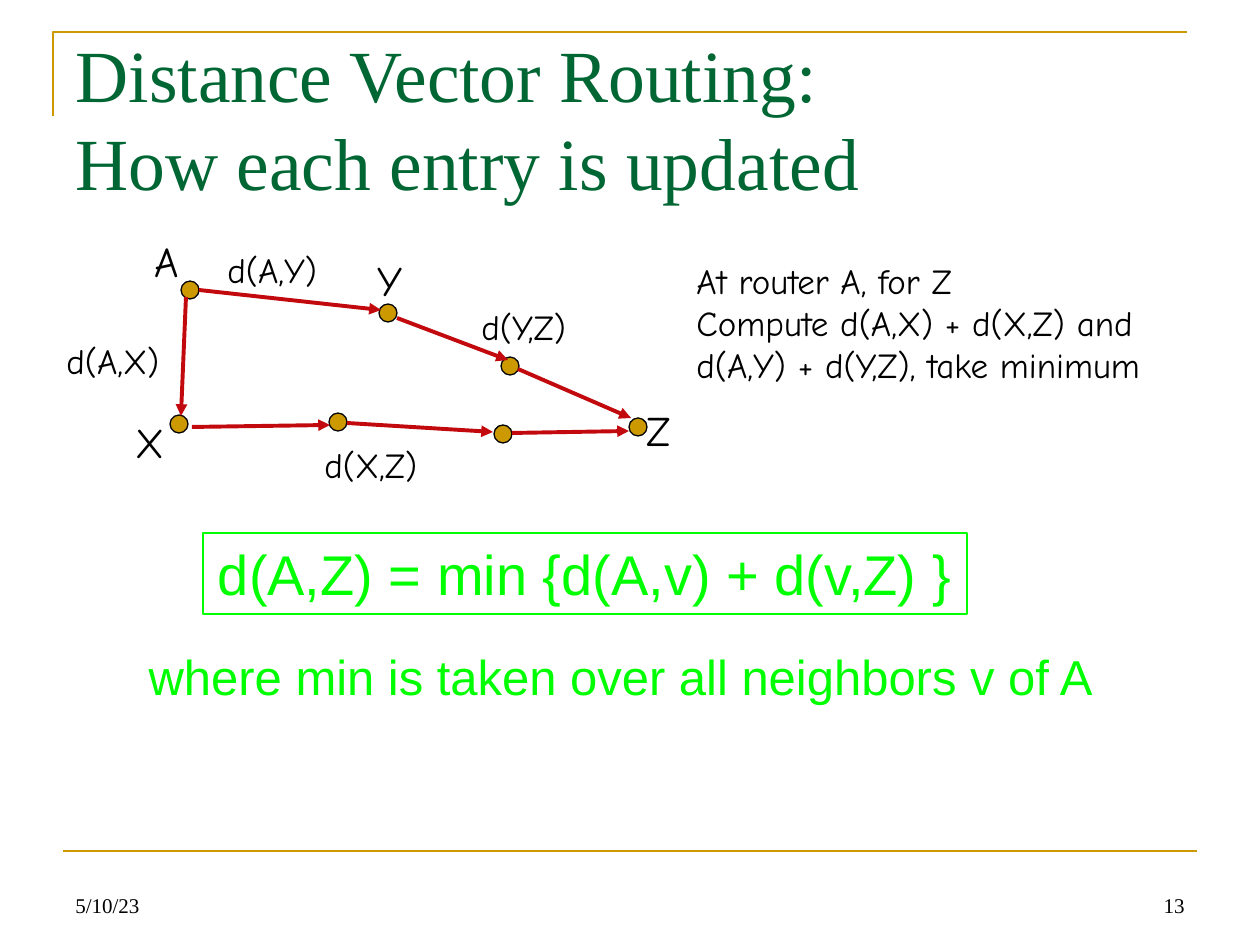
from lxml import etree
from pptx import Presentation
from pptx import util as u
from pptx.dml.color import RGBColor
from pptx.enum import shapes, text
from pptx.oxml.ns import qn

EMU_PER_PX = 914400 / 126
BLACK = RGBColor(0x00, 0x00, 0x00)
GOLD = RGBColor(0xCC, 0x99, 0x00)
DARK_GREEN = RGBColor(0x00, 0x66, 0x33)
BRIGHT_GREEN = RGBColor(0x00, 0xFF, 0x00)
RED = RGBColor(0xC2, 0x0A, 0x0E)
SERIF, SANS, HAND = "Times New Roman", "Arial", "Comic Neue"
LEFT, CENTER, RIGHT = text.PP_ALIGN.LEFT, text.PP_ALIGN.CENTER, text.PP_ALIGN.RIGHT
TOP, MIDDLE, BOTTOM = text.MSO_ANCHOR.TOP, text.MSO_ANCHOR.MIDDLE, text.MSO_ANCHOR.BOTTOM


def px(*lengths):
    return [u.Emu(round(length * EMU_PER_PX)) for length in lengths]


def write_text(frame, content, font=HAND, size=20, color=BLACK, align=LEFT,
               anchor=TOP, wrap=False):
    """Fill a text frame; a newline starts a paragraph, a \\v breaks a line."""
    frame.word_wrap = wrap
    frame.auto_size = (text.MSO_AUTO_SIZE.NONE if wrap
                       else text.MSO_AUTO_SIZE.SHAPE_TO_FIT_TEXT)
    frame.vertical_anchor = anchor
    for index, line in enumerate(content.split("\n")):
        paragraph = frame.add_paragraph() if index else frame.paragraphs[0]
        paragraph.text = line
        paragraph.alignment = align
        for run in paragraph.runs:
            run.font.name, run.font.size = font, u.Pt(size)
            run.font.color.rgb = color


class RoutingSlide:
    """Holds the slide and the shared drawing style."""
    node_size = 18
    thin, rule, link = 0.75, 1.5, 2.25

    def __init__(self, slide):
        self.slide = slide

    def title(self, content, box):
        title = self.slide.shapes.title
        title.left, title.top, title.width, title.height = px(*box)
        write_text(title.text_frame, content, font=SERIF, size=42,
                   color=DARK_GREEN, anchor=MIDDLE, wrap=True)

    def label(self, content, box, **style):
        write_text(self.slide.shapes.add_textbox(*px(*box)).text_frame,
                   content, **style)

    def shape(self, kind, box, line, fill=None):
        shape = self.slide.shapes.add_shape(kind, *px(*box))
        self.outline(shape, line, self.thin)
        if fill is not None:
            shape.fill.solid()
            shape.fill.fore_color.rgb = fill
        return shape

    def node(self, left, top):
        self.shape(shapes.MSO_SHAPE.OVAL,
                   (left, top, self.node_size, self.node_size), BLACK, GOLD)

    def outline(self, shape, color, width):
        shape.shadow.inherit = False
        shape.fill.background()
        shape.line.color.rgb, shape.line.width = color, u.Pt(width)

    def polyline(self, start, *points):
        builder = self.slide.shapes.build_freeform(*start, scale=EMU_PER_PX)
        builder.add_line_segments(points, close=False)
        self.outline(builder.convert_to_shape(), GOLD, self.rule)

    def line(self, start, end, color, width, arrow=False):
        connector = self.slide.shapes.add_connector(
            shapes.MSO_CONNECTOR.STRAIGHT, *px(*start, *end))
        connector.line.color.rgb, connector.line.width = color, u.Pt(width)
        if arrow:
            etree.SubElement(connector.line._get_or_add_ln(), qn("a:tailEnd"),
                             type="triangle")
        etree.SubElement(connector._element.spPr, qn("a:effectLst"))


def main():
    presentation = Presentation()
    presentation.slide_width, presentation.slide_height = px(1260, 945)
    page = RoutingSlide(
        presentation.slides.add_slide(presentation.slide_layouts[5]))

    # Frame and title
    page.polyline((53, 116), (53, 32), (1187, 32))
    page.line((63, 851), (1197, 851), GOLD, page.rule)
    page.title("Distance Vector Routing:\vHow each entry is updated",
               (63, 38, 1134, 158))

    # Routers: A, X, Y, Z and the hops between them
    for left, top in [(181, 281), (170, 415), (379, 304), (501, 357),
                      (629, 418), (329, 413), (494, 425)]:
        page.node(left, top)

    # Links
    for start, end in [((199, 290), (381, 310)), ((186, 297), (181, 416)),
                       ((397, 318), (508, 360)), ((518, 369), (631, 418)),
                       ((192, 427), (330, 425)), ((347, 423), (493, 432)),
                       ((512, 433), (629, 431))]:
        page.line(start, end, RED, page.link, arrow=True)

    # Router names
    for name, left, top, width in [("A", 142, 229, 55), ("X", 123, 410, 55),
                                   ("Y", 365, 248, 52), ("Z", 634, 398, 54)]:
        page.label(name, (left, top, width, 63), size=24)

    # Distances
    for name, left, top, width in [
            ("d(A,X)", 54, 333, 132), ("d(A,Y)", 215, 242, 130),
            ("d(Y,Z)", 469, 299, 129), ("d(X,Z)", 312, 437, 131)]:
        page.label(name, (left, top, width, 54))

    # Explanation
    page.label("At router A, for Z\nCompute d(A,X) + d(X,Z) and\n"
               "d(A,Y) + d(Y,Z), take minimum", (684, 253, 510, 139))

    # Update rule
    formula = page.shape(shapes.MSO_SHAPE.RECTANGLE, (203, 533, 764, 81),
                         BRIGHT_GREEN)
    write_text(formula.text_frame, "d(A,Z) = min {d(A,v) + d(v,Z) }",
               font=SANS, size=32, color=BRIGHT_GREEN, align=CENTER)
    page.label("where min is taken over all neighbors v of A",
               (133, 640, 975, 72), font=SANS, size=28, color=BRIGHT_GREEN,
               align=CENTER)

    # Footer
    for content, left, align in [("13", 903, RIGHT), ("5/10/23", 63, LEFT)]:
        page.label(content, (left, 861, 294, 63), font=SERIF, size=12,
                   align=align, anchor=BOTTOM, wrap=True)

    presentation.save("out.pptx")


if __name__ == "__main__":
    main()
